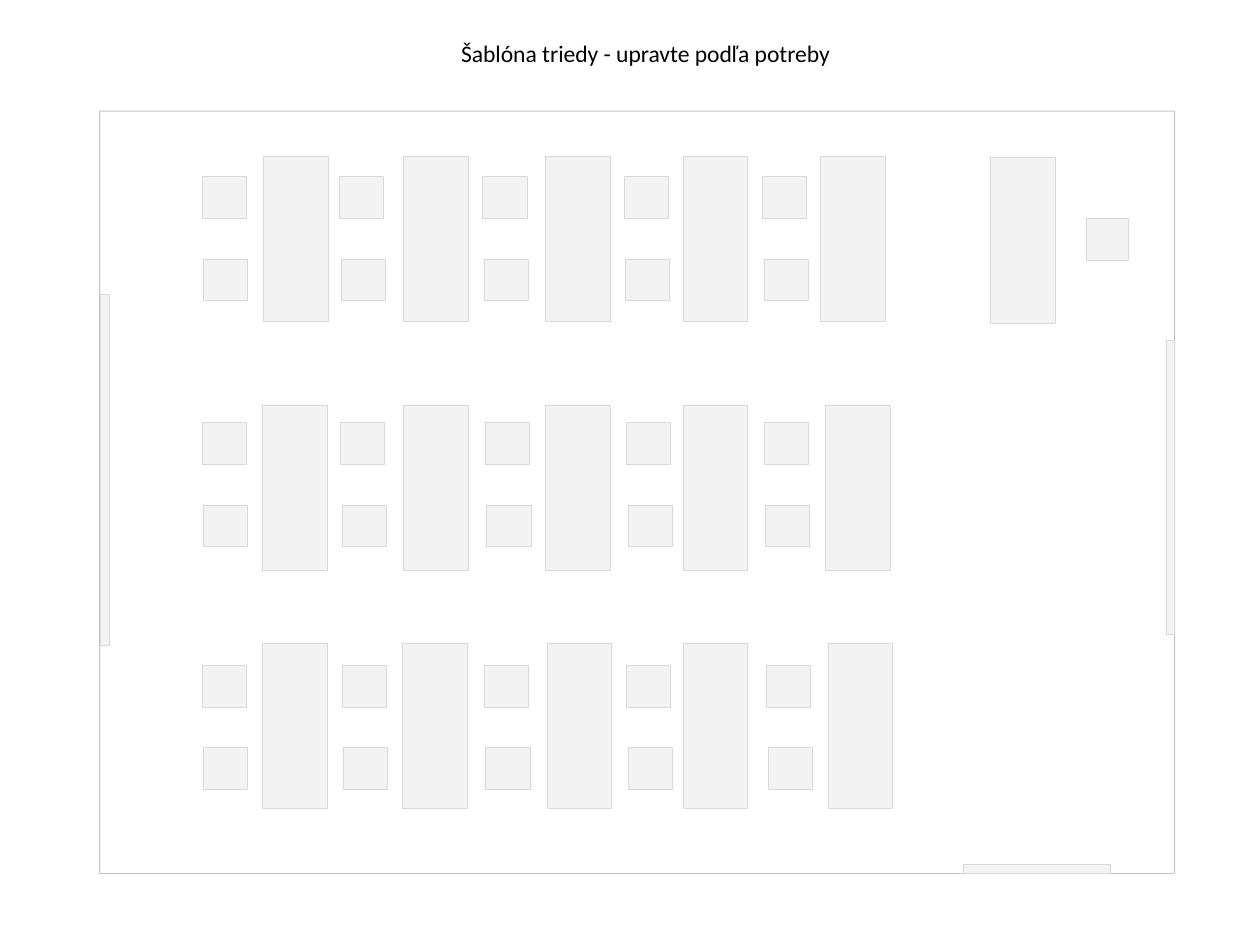
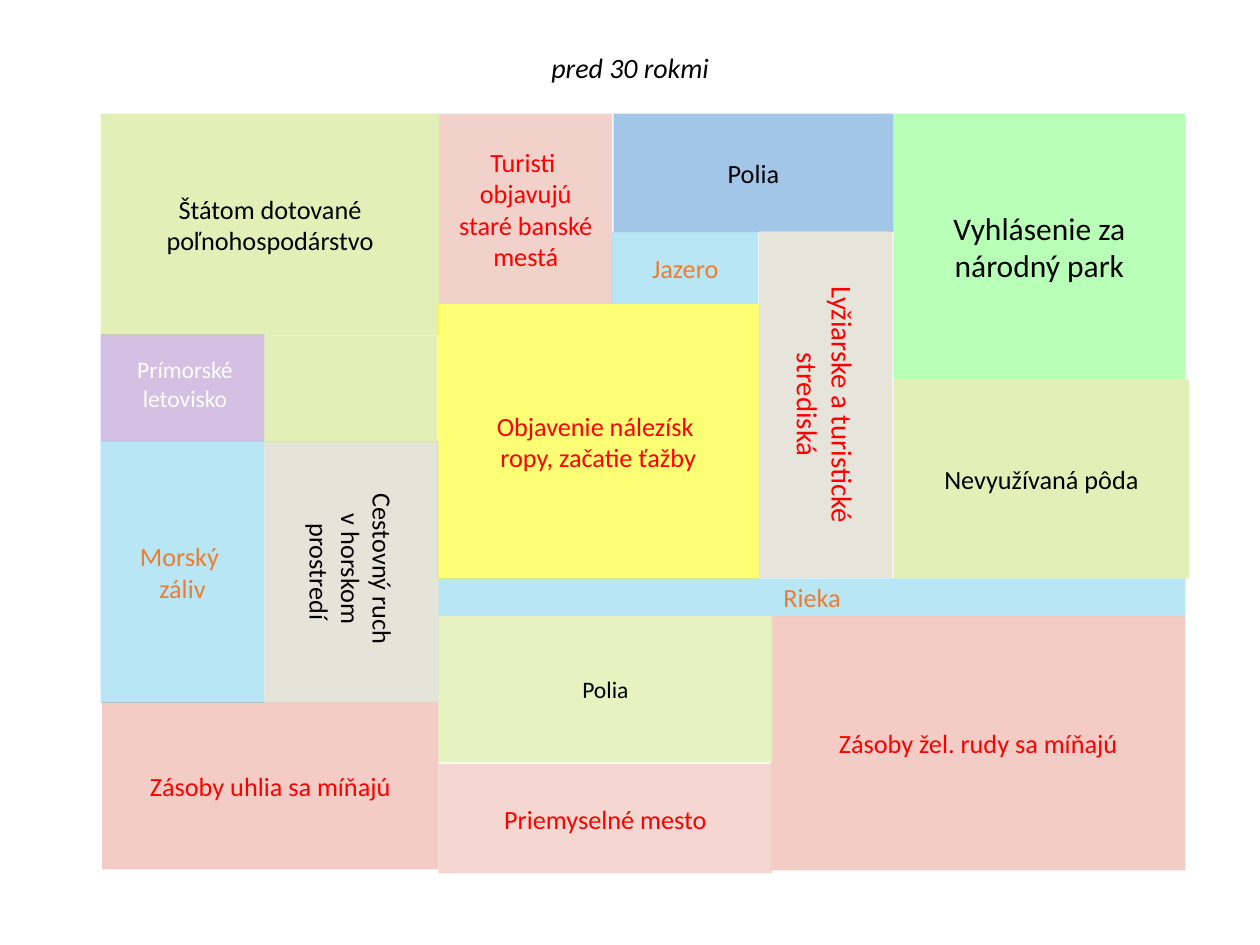
from collections import namedtuple

from lxml.etree import SubElement
from pptx import Presentation
from pptx.dml.color import RGBColor
from pptx.enum.shapes import MSO_SHAPE
from pptx.enum.text import MSO_ANCHOR, MSO_AUTO_SIZE, PP_ALIGN
from pptx.oxml.ns import qn
from pptx.util import Cm, Pt

BLACK = RGBColor(0x00, 0x00, 0x00)
WHITE = RGBColor(0xFF, 0xFF, 0xFF)
RED = RGBColor(0xFF, 0x00, 0x00)
ORANGE = RGBColor(0xED, 0x7D, 0x31)
WALL_GREY = RGBColor(0xBF, 0xBF, 0xBF)
FURNITURE_GREY = RGBColor(0xD9, 0xD9, 0xD9)
PARK_GREEN = RGBColor(0x00, 0xFF, 0x00)
FIELD_BLUE = RGBColor(0x5B, 0x9B, 0xD5)
FARM_GREEN = RGBColor(0xD6, 0xEB, 0x99)
PALE_GREEN = RGBColor(0xE2, 0xF1, 0xB7)
OIL_YELLOW = RGBColor(0xFF, 0xFF, 0x00)
WATER_BLUE = RGBColor(0x11, 0xA9, 0xDF)
MINE_RED = RGBColor(0xD3, 0x48, 0x31)
CITY_PINK = RGBColor(0xF3, 0xCC, 0xC6)
MOUNTAIN_GREY = RGBColor(0xDB, 0xD9, 0xC9)
PURPLE = RGBColor(0x70, 0x30, 0xA0)

FONT = "Calibri"
TITLE_ONLY = 5

Box = namedtuple("Box", "left top width height")
Zone = namedtuple("Zone", "box fill opacity text color size rotation", defaults=("", BLACK, 15, 0))

ROOM = Box(2.01, 2.24, 21.67, 15.37)
DESK = (1.3, 3.33)
CHAIR = (0.89, 0.84)
DeskRow = namedtuple("DeskRow", "desk_top desk_lefts chair_top chair_lefts")
DESK_ROWS = [
    DeskRow(0.91, (3.3, 6.12, 8.99, 11.76, 14.53), 1.32, (2.06, 4.83, 7.72, 10.57, 13.36)),
    DeskRow(5.92, (3.28, 6.12, 8.99, 11.76, 14.63), 6.28, (2.06, 4.85, 7.77, 10.62, 13.39)),
    DeskRow(10.72, (3.28, 6.1, 9.02, 11.76, 14.68), 11.17, (2.06, 4.88, 7.75, 10.62, 13.44)),
]
CHAIR_STEP = (0.03, 1.66)
TEACHER_DESK = Box(17.96, 0.94, *DESK)
TEACHER_CHAIR = Box(19.88, 2.17, 0.86, 0.84)
FRONT_BOARD = Box(21.49, 4.62, 0.18, 5.92)
BACK_BOARD = Box(0.01, 3.7, 0.18, 7.06)
DOOR = Box(17.4, 15.19, 2.97, 0.18)

REGION = Box(2.03, 2.29, 21.95, 15.32)
RESORT_LABEL = Box(0, 4.75, 3.4, 1.73)
ZONES = [
    Zone(Box(15.98, 0, 5.89, 5.36), PARK_GREEN, 28, "Vyhlásenie za\vnárodný park", size=18),
    Zone(Box(10.34, 0, 5.64, 2.39), FIELD_BLUE, 57, "Polia"),
    Zone(Box(0, 0, 6.83, 4.47), FARM_GREEN, 70, "Štátom dotované\vpoľnohospodárstvo"),
    Zone(Box(6.78, 3.84, 6.5, 5.54), OIL_YELLOW, 54,
         "Objavenie nálezísk \vropy, začatie ťažby", RED),
    Zone(Box(6.81, 9.37, 15.06, 0.76), WATER_BLUE, 29, "Rieka", ORANGE),
    Zone(Box(13.51, 10.13, 8.36, 5.13), MINE_RED, 28, "Zásoby žel. rudy sa míňajú", RED),
    Zone(Box(6.81, 10.13, 6.73, 2.95), PALE_GREEN, 85, "Polia", size=13.5),
    Zone(Box(0.03, 11.86, 6.78, 3.38), MINE_RED, 28, "Zásoby uhlia sa míňajú", RED),
    Zone(Box(13.27, 2.37, 2.69, 6.99), MOUNTAIN_GREY, 66,
         "Lyžiarske a turistické\vstrediská", RED, 16.5, 90),
    Zone(Box(0, 6.6, 3.3, 5.28), WATER_BLUE, 29, "Morský \nzáliv", ORANGE),
    Zone(Box(3.3, 6.6, 3.51, 5.28), MOUNTAIN_GREY, 70,
         "Cestovný ruch \vv horskom \nprostredí", rotation=90),
    Zone(Box(6.83, 0, 3.48, 3.84), MINE_RED, 25,
         "Turisti \vobjavujú\vstaré banské\vmestá", RED),
    Zone(Box(10.31, 2.39, 2.95, 1.45), WATER_BLUE, 29, "Jazero", ORANGE),
    Zone(Box(15.98, 5.36, 5.97, 4.01), FARM_GREEN, 70, "Nevyužívaná pôda"),
    Zone(Box(6.81, 13.11, 6.73, 2.21), CITY_PINK, 80, "Priemyselné mesto", RED),
    Zone(Box(3.3, 4.47, 3.48, 2.16), FARM_GREEN, 70),
    Zone(Box(0, 4.45, 3.3, 2.16), PURPLE, 30),
]


def inside(parent, box):
    """Return a box given relative to its parent as a box on the slide."""
    return Box(parent.left + box.left, parent.top + box.top, box.width, box.height)


def set_opacity(properties, percent):
    """Set the opacity of the solid fill within the given XML properties."""
    color = properties.find(qn("a:solidFill"))[0]
    SubElement(color, qn("a:alpha")).set("val", str(percent * 1000))


def write_text(shape, text, color, size, alignment=PP_ALIGN.CENTER, **formats):
    """Write text into a shape and format every paragraph alike."""
    frame = shape.text_frame
    frame.text = text
    formats = {"name": FONT, "size": Pt(size), **formats}
    for paragraph in frame.paragraphs:
        paragraph.alignment = alignment
        for run in paragraph.runs:
            for name, value in formats.items():
                setattr(run.font, name, value)
            run.font.color.rgb = color
    return frame


def add_rectangle(shapes, box, fill, opacity=100, line=None, line_width=0.25, rotation=0):
    """Add a rectangle that covers the box as seen after its rotation."""
    width, height = (box.height, box.width) if rotation == 90 else (box.width, box.height)
    left = box.left + (box.width - width) / 2
    top = box.top + (box.height - height) / 2
    shape = shapes.add_shape(MSO_SHAPE.RECTANGLE, Cm(left), Cm(top), Cm(width), Cm(height))
    shape.rotation = rotation
    shape.shadow.inherit = False
    shape.fill.solid()
    shape.fill.fore_color.rgb = fill
    set_opacity(shape._element.spPr, opacity)
    if line is None:
        shape.line.fill.background()
    else:
        shape.line.color.rgb = line
        shape.line.width = Pt(line_width)
    return shape


def add_titled_slide(presentation, box, text, size, alignment, italic=False):
    """Add a title-only slide with its title placed in the box."""
    slide = presentation.slides.add_slide(presentation.slide_layouts[TITLE_ONLY])
    title = slide.shapes.title
    for name, value in box._asdict().items():
        setattr(title, name, Cm(value))
    frame = write_text(title, text, BLACK, size, alignment, italic=italic)
    settings = {"word_wrap": True, "vertical_anchor": MSO_ANCHOR.TOP,
                "auto_size": MSO_AUTO_SIZE.SHAPE_TO_FIT_TEXT}
    for name, value in settings.items():
        setattr(frame, name, value)
    return slide


def add_furniture(slide, room, box, rotation=90):
    """Add one piece of furniture at a place within the room."""
    add_rectangle(slide.shapes, inside(room, box), FURNITURE_GREY, 30,
                  FURNITURE_GREY, rotation=rotation)


def add_desk_row(slide, room, row):
    """Add a row of desks, each with two chairs behind it."""
    step_x, step_y = CHAIR_STEP
    for desk_left, chair_left in zip(row.desk_lefts, row.chair_lefts):
        add_furniture(slide, room, Box(desk_left, row.desk_top, *DESK))
        for seat in range(2):
            chair = Box(chair_left + seat * step_x, row.chair_top + seat * step_y, *CHAIR)
            add_furniture(slide, room, chair)


def add_classroom(slide, room):
    """Draw the classroom walls and the furniture inside them."""
    walls = add_rectangle(slide.shapes, room, WHITE, line=WALL_GREY, line_width=0.5)
    set_opacity(walls._element.spPr.find(qn("a:ln")), 89)
    for row in DESK_ROWS:
        add_desk_row(slide, room, row)
    for box in (TEACHER_DESK, TEACHER_CHAIR, FRONT_BOARD, BACK_BOARD):
        add_furniture(slide, room, box)
    add_furniture(slide, room, DOOR, rotation=0)


def add_region_map(slide, region):
    """Draw the land-use zones as one group within the region."""
    shapes = slide.shapes.add_group_shape().shapes
    for zone in ZONES:
        shape = add_rectangle(shapes, inside(region, zone.box), zone.fill, zone.opacity,
                              rotation=zone.rotation)
        if zone.text:
            frame = write_text(shape, zone.text, zone.color, zone.size)
            frame.vertical_anchor = MSO_ANCHOR.MIDDLE
            frame.word_wrap = False
    label = shapes.add_textbox(*(Cm(value) for value in inside(region, RESORT_LABEL)))
    write_text(label, "Prímorské letovisko", WHITE, 13.5).word_wrap = True


def main():
    """Build both slides and save the presentation."""
    presentation = Presentation()
    presentation.slide_width = Cm(25.4)
    presentation.slide_height = Cm(19.05)
    classroom = add_titled_slide(presentation, Box(9.04, 0.66, 8.71, 0.84),
                                 "Šablóna triedy - upravte podľa potreby", 13.5, PP_ALIGN.LEFT)
    add_classroom(classroom, ROOM)
    past = add_titled_slide(presentation, Box(3.18, 0.89, 19.05, 0.94),
                            "pred 30 rokmi", 16, PP_ALIGN.CENTER, italic=True)
    add_region_map(past, REGION)
    presentation.save("out.pptx")


if __name__ == "__main__":
    main()
